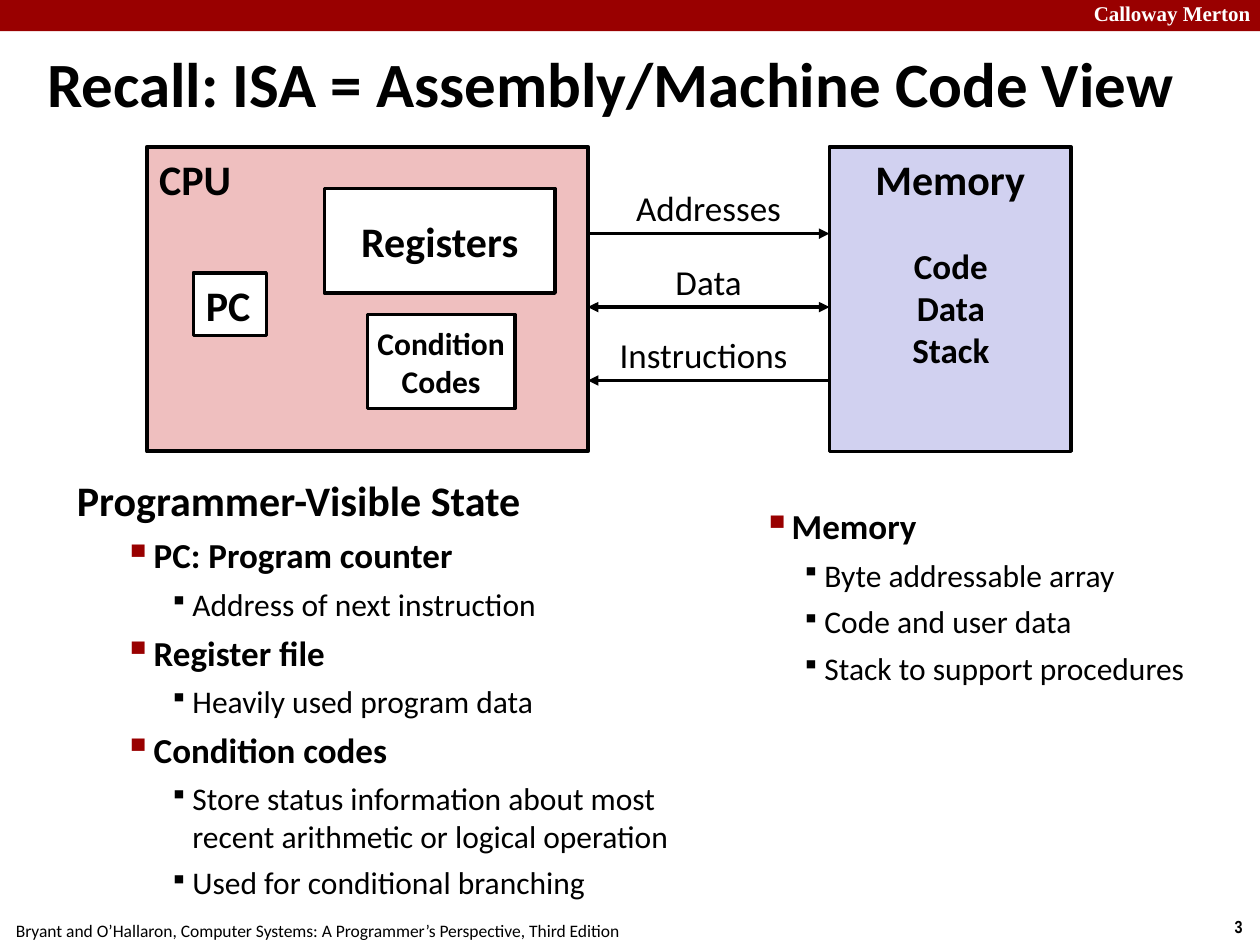
from lxml import etree
from pptx import Presentation
from pptx import util as u
from pptx.dml.color import RGBColor
from pptx.enum import shapes, text
from pptx.oxml.ns import qn

COLORS = {
    "black": "000000",
    "white": "FFFFFF",
    "red": "990000",
    "pink": "EFBFBF",
    "lavender": "D1D1F0",
}
LEFT, CENTER = text.PP_ALIGN.LEFT, text.PP_ALIGN.CENTER
TOP, MIDDLE = text.MSO_ANCHOR.TOP, text.MSO_ANCHOR.MIDDLE
WIDE_INSET, THIN_INSET = (0.25, 0.13), (0.1, 0.1)

# Size, weight, bullet colour and bullet size in percent for each outline level
LEVELS = [
    dict(size=24, bold=True, before=6),
    dict(size=20, bold=True, before=5, bullet=("red", 110)),
    dict(size=18, bold=False, before=5, bullet=("black", 80)),
]


def color(name):
    return RGBColor.from_string(COLORS[name])


def cm_box(box):
    return [u.Cm(length) for length in box]


def inside(box, left, top, width, height):
    """Turn a place relative to the corner of box into a place on the page."""
    return box[0] + left, box[1] + top, width, height


def write(frame, lines, size=20, bold=False, font="Calibri", ink="black",
          align=LEFT, anchor=TOP, wrap=True, inset=WIDE_INSET):
    """Fill a text frame with one paragraph per line and return the paragraphs."""
    frame.word_wrap = wrap
    frame.auto_size = text.MSO_AUTO_SIZE.NONE
    frame.vertical_anchor = anchor
    frame.margin_left = frame.margin_right = u.Cm(inset[0])
    frame.margin_top = frame.margin_bottom = u.Cm(inset[1])
    paras = []
    for number, line in enumerate(lines):
        para = frame.add_paragraph() if number else frame.paragraphs[0]
        para.alignment = align
        span = para.add_run()
        span.text = line
        span.font.name = font
        span.font.size = u.Pt(size)
        span.font.bold = bold
        span.font.color.rgb = color(ink)
        paras.append(para)
    return paras


def add_text(page, box, *lines, **style):
    shape = page.shapes.add_textbox(*cm_box(box))
    return write(shape.text_frame, lines, **style)


def add_panel(page, box, fill, *lines, line_width=2, **style):
    shape = page.shapes.add_shape(shapes.MSO_SHAPE.RECTANGLE, *cm_box(box))
    shape.shadow.inherit = False
    shape.fill.solid()
    shape.fill.fore_color.rgb = color(fill)
    if line_width:
        shape.line.color.rgb = color("black")
        shape.line.width = u.Pt(line_width)
    else:
        shape.line.fill.background()
    return write(shape.text_frame, lines, **style)


def add_arrow(page, start, end, y, ends):
    """Draw a level line; ends names the tips (headEnd, tailEnd) with arrowheads."""
    arrow = page.shapes.add_connector(
        shapes.MSO_CONNECTOR.STRAIGHT, *cm_box((start, y, end, y)))
    arrow.line.color.rgb = color("black")
    arrow.line.width = u.Pt(2)
    line = arrow.line._get_or_add_ln()
    for tip in ends:
        etree.SubElement(line, qn("a:" + tip), type="triangle")
    etree.SubElement(arrow._element.spPr, qn("a:effectLst"))


def add_bullet(para, ink, percent):
    props = para._p.get_or_add_pPr()
    tint = etree.SubElement(props, qn("a:buClr"))
    etree.SubElement(tint, qn("a:srgbClr"), val=COLORS[ink])
    etree.SubElement(props, qn("a:buSzPct"), val=str(percent * 1000))
    etree.SubElement(props, qn("a:buChar"), char="▪")


def format_outline(paras, levels, indents):
    """Give each paragraph the look of its level; indents maps level to (left, hanging)."""
    for para, level in zip(paras, levels):
        look = LEVELS[level]
        left, hanging = indents[level]
        para.level = level
        para.space_before = u.Pt(look["before"])
        props = para._p.get_or_add_pPr()
        props.set("marL", str(u.Cm(left)))
        props.set("indent", str(-u.Cm(hanging)))
        para.runs[0].font.size = u.Pt(look["size"])
        para.runs[0].font.bold = look["bold"]
        if "bullet" in look:
            add_bullet(para, *look["bullet"])


def add_header(page, box):
    add_panel(page, box, "red", line_width=0)
    add_text(page, inside(box, 21.95, -0.08, 3.66, 0.71), "Calloway Merton",
             size=12, bold=True, font="Times New Roman", ink="white", inset=THIN_INSET)


def add_footer(page, box):
    add_text(page, inside(box, -0.05, 0.08, 12.9, 0.69),
             "Bryant and O’Hallaron, Computer Systems: A Programmer’s Perspective, "
             "Third Edition", size=10, align=CENTER, wrap=False)
    add_text(page, inside(box, 24.54, 0, 0.86, 0.69), "3", size=10, bold=True,
             font="Arial Narrow", align=CENTER, wrap=False)


def add_cpu(page, box):
    add_panel(page, box, "pink", "CPU", line_width=2.25, size=24, bold=True)
    part = dict(bold=True, anchor=MIDDLE, wrap=False)
    add_panel(page, inside(box, 0.94, 2.54, 1.47, 1.27), "white", "PC", size=24, **part)
    add_panel(page, inside(box, 3.58, 0.84, 4.65, 2.11), "white", "Registers",
              size=24, align=CENTER, **part)
    add_panel(page, inside(box, 4.45, 3.38, 2.97, 1.9), "white", "Condition", "Codes",
              size=18, align=CENTER, **part)


def add_memory(page, box):
    add_panel(page, box, "lavender", "Memory", size=24, bold=True, align=CENTER, wrap=False)
    add_text(page, inside(box, 0.86, 1.83, 3.18, 2.82), "Code", "Data", "Stack",
             bold=True, align=CENTER)


def add_buses(page, box):
    """Draw the labelled arrows at equal steps across the gap between two blocks."""
    left, top, width, _ = box
    buses = [
        ("Addresses", width, ["tailEnd"]),
        ("Data", width, ["headEnd", "tailEnd"]),
        ("Instructions", width - 0.2, ["headEnd"]),
    ]
    for number, (label, label_width, ends) in enumerate(buses):
        y = top + 1.75 + 1.48 * number
        add_arrow(page, left, left + width, y, ends)
        add_text(page, (left, y - 1.07, label_width, 1.09), label, align=CENTER)


def add_state_outline(page, box):
    items = [
        (0, "Programmer-Visible State"),
        (1, "PC: Program counter"),
        (2, "Address of next instruction"),
        (1, "Register file"),
        (2, "Heavily used program data"),
        (1, "Condition codes"),
        (2, "Store status information about most recent arithmetic or logical operation"),
        (2, "Used for conditional branching"),
    ]
    levels, lines = zip(*items)
    paras = add_panel(page, box, "white", *lines, line_width=0, inset=THIN_INSET)
    format_outline(paras, levels, {0: (0.64, 0.64), 1: (1.55, 0.6), 2: (2.33, 0.46)})


def add_memory_outline(page, box):
    paras = add_text(page, box, "Memory", "Byte addressable array", "Code and user data",
                     "Stack to support procedures", inset=THIN_INSET)
    format_outline(paras, [1, 2, 2, 2], {1: (0.82, 0.48), 2: (1.58, 0.46)})


def main():
    deck = Presentation()
    deck.slide_width, deck.slide_height = u.Cm(25.4), u.Cm(19.05)
    page = deck.slides.add_slide(deck.slide_layouts[6])
    add_header(page, (0, 0, 25.4, 0.63))
    add_text(page, (0.85, 0.85, 23.44, 1.6), "Recall: ISA = Assembly/Machine Code View",
             size=36, bold=True, anchor=MIDDLE, inset=THIN_INSET)
    add_state_outline(page, (1.45, 9.47, 13.49, 8.84))
    add_memory_outline(page, (14.94, 10.08, 10.06, 4.37))
    add_cpu(page, (2.96, 2.96, 8.89, 6.14))
    add_memory(page, (16.72, 2.96, 4.87, 6.14))
    add_buses(page, (11.85, 2.96, 4.87, 6.14))
    add_footer(page, (0, 18.34, 25.4, 0.71))
    deck.save("out.pptx")


if __name__ == "__main__":
    main()
